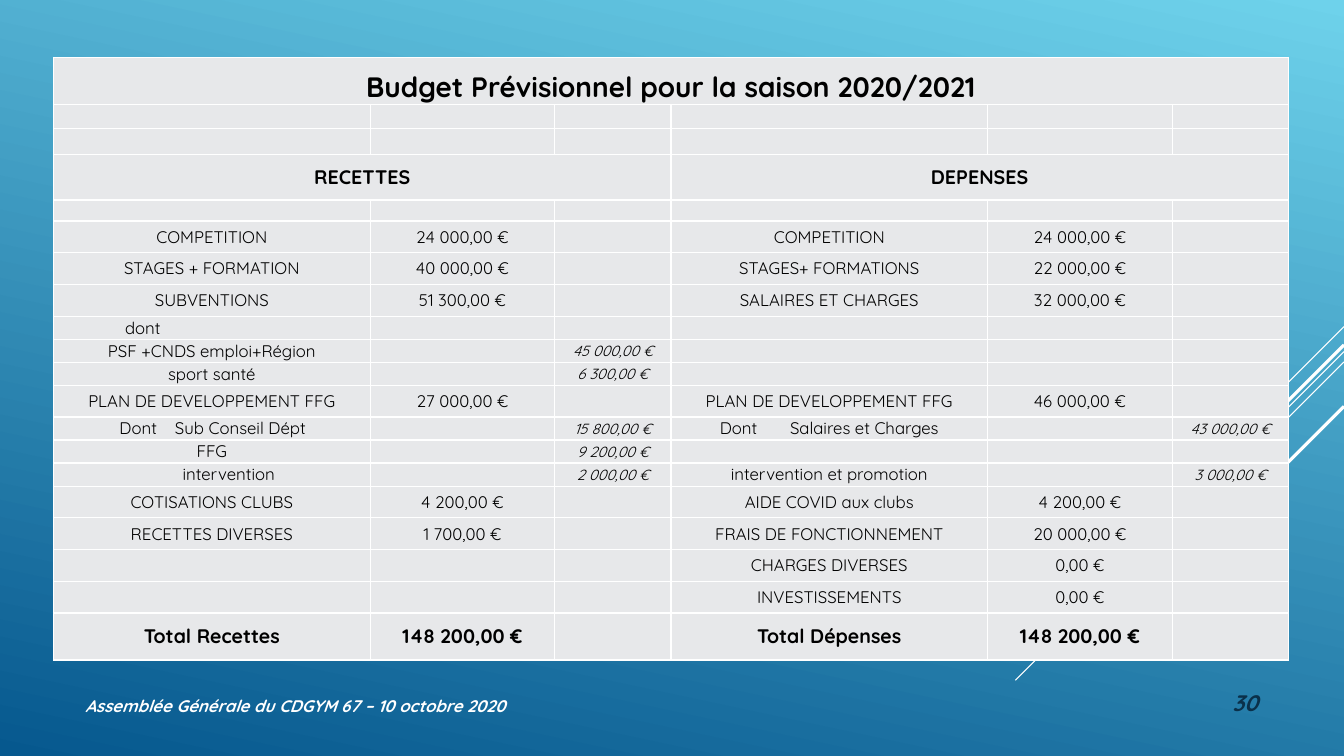
import pptx
import pptx.dml.color
import pptx.enum.shapes
import pptx.enum.text
import pptx.oxml
import pptx.oxml.ns
import pptx.util
from pptx.util import Cm

COLORS = {"sky": "6ED2EB", "deep": "06588E", "white": "FFFFFF",
          "cell": "E7E8EA", "ink": "000000", "number": "0A304A"}
FONT = "Quicksand"
ALIGN = pptx.enum.text.PP_ALIGN
ANCHOR = pptx.enum.text.MSO_ANCHOR
SLIDE_WIDTH, SLIDE_HEIGHT = 33.87, 19.05

COLUMN_WIDTHS = [7.98, 4.65, 2.93] * 2
TITLE = "Budget Prévisionnel pour la saison 2020/2021"
HEADINGS = ["RECETTES", "DEPENSES"]
HEADER_HEIGHTS = [1.19, 0.6, 0.66, 1.14, 0.53]
MAIN, DETAIL, TOTAL = 0.8, 0.58, 1.18
BUDGET = [
    (MAIN, "COMPETITION", "24 000,00 €", "", "COMPETITION", "24 000,00 €", ""),
    (MAIN, "STAGES + FORMATION", "40 000,00 €", "", "STAGES+ FORMATIONS", "22 000,00 €", ""),
    (MAIN, "SUBVENTIONS", "51 300,00 €", "", "SALAIRES ET CHARGES", "32 000,00 €", ""),
    (DETAIL, "dont", "", "", "", "", ""),
    (DETAIL, "PSF +CNDS emploi+Région", "", "45 000,00 €", "", "", ""),
    (DETAIL, "sport santé", "", "6 300,00 €", "", "", ""),
    (MAIN, "PLAN DE DEVELOPPEMENT FFG", "27 000,00 €", "",
     "PLAN DE DEVELOPPEMENT FFG", "46 000,00 €", ""),
    (DETAIL, "Dont\tSub Conseil Dépt", "", "15 800,00 €",
     "Dont\tSalaires et Charges", "", "43 000,00 €"),
    (DETAIL, "FFG", "", "9 200,00 €", "", "", ""),
    (DETAIL, "intervention", "", "2 000,00 €", "intervention et promotion", "", "3 000,00 €"),
    (MAIN, "COTISATIONS CLUBS", "4 200,00 €", "", "AIDE COVID aux clubs", "4 200,00 €", ""),
    (MAIN, "RECETTES DIVERSES", "1 700,00 €", "", "FRAIS DE FONCTIONNEMENT", "20 000,00 €", ""),
    (MAIN, "", "", "", "CHARGES DIVERSES", "0,00 €", ""),
    (MAIN, "", "", "", "INVESTISSEMENTS", "0,00 €", ""),
    (TOTAL, "Total Recettes", "148 200,00 €", "", "Total Dépenses", "148 200,00 €", ""),
]
LEFT_INDENTS = {"intervention": 3.25, "Dont\tSub Conseil Dépt": 1.66,
                "Dont\tSalaires et Charges": 1.23}
TAB_STOPS = {"Dont\tSub Conseil Dépt": 1.4, "Dont\tSalaires et Charges": 1.77}
RAYS = [(8.23, 2.54, 0.75), (8.86, 8.28, 0.75), (9.12, 5.26, 0.75),
        (8.69, 4.85, 2.25), (10.24, 3.53, 2.25)]


def rgb(name):
    return pptx.dml.color.RGBColor.from_string(COLORS[name])


def write(para, text, size, color, bold=False, italic=False):
    para.text = text
    for span in para.runs:
        font = span.font
        font.name, font.size = FONT, pptx.util.Pt(size)
        font.bold, font.italic = bold, italic
        font.color.rgb = rgb(color)


def paint_background(page):
    fill = page.background.fill
    fill.gradient()
    fill.gradient_angle = 258
    for stop, name in zip(fill.gradient_stops, ("sky", "deep")):
        stop.color.rgb = rgb(name)


def add_rays(page, right):
    for top, reach, weight in RAYS:
        ray = page.shapes.add_connector(
            pptx.enum.shapes.MSO_CONNECTOR.STRAIGHT,
            Cm(right), Cm(top), Cm(right - reach), Cm(top + reach))
        ray.line.color.rgb = rgb("white")
        ray.line.width = pptx.util.Pt(weight)
        ray._element.spPr.append(pptx.oxml.parse_xml(
            f'<a:effectLst {pptx.oxml.ns.nsdecls("a")}/>'))


def add_label(page, left, top, width, height, text, size, color, align, anchor):
    box = page.shapes.add_textbox(Cm(left), Cm(top), Cm(width), Cm(height))
    frame = box.text_frame
    frame.word_wrap = True
    frame.vertical_anchor = anchor
    para = frame.paragraphs[0]
    para.alignment = align
    write(para, text, size, color, bold=True, italic=True)


def style_cell(cell):
    cell.margin_left = cell.margin_right = cell.margin_top = cell.margin_bottom = 0
    cell.vertical_anchor = ANCHOR.MIDDLE
    namespace = pptx.oxml.ns.nsdecls("a")
    properties = cell._tc.get_or_add_tcPr()
    for side in ("lnL", "lnR", "lnT", "lnB"):
        properties.append(pptx.oxml.parse_xml(
            f'<a:{side} {namespace} w="12700"><a:solidFill>'
            f'<a:srgbClr val="{COLORS["white"]}"/></a:solidFill></a:{side}>'))
    cell.fill.solid()
    cell.fill.fore_color.rgb = rgb("cell")
    cell.text_frame.paragraphs[0]._p.append(pptx.oxml.parse_xml(
        f'<a:endParaRPr {namespace} sz="800"/>'))


def fill_cell(cell, text, size, bold=False, italic=False):
    para = cell.text_frame.paragraphs[0]
    para.alignment = ALIGN.CENTER
    if text in LEFT_INDENTS:
        para.alignment = ALIGN.LEFT
        cell.margin_left = Cm(LEFT_INDENTS[text])
    if text in TAB_STOPS:
        para._p.get_or_add_pPr().append(pptx.oxml.parse_xml(
            f'<a:tabLst {pptx.oxml.ns.nsdecls("a")}>'
            f'<a:tab pos="{Cm(TAB_STOPS[text])}" algn="l"/></a:tabLst>'))
    if text == "dont":
        cell.margin_right = Cm(3.48)
    write(para, text, size, "ink", bold, italic)


def add_budget(page, left, top):
    heights = HEADER_HEIGHTS + [entry[0] for entry in BUDGET]
    frame = page.shapes.add_table(
        len(heights), len(COLUMN_WIDTHS), Cm(left), Cm(top),
        Cm(sum(COLUMN_WIDTHS)), Cm(sum(heights)))
    table = frame.table
    for column, width in zip(table.columns, COLUMN_WIDTHS):
        column.width = Cm(width)
    for row, height in zip(table.rows, heights):
        row.height = Cm(height)
        for cell in row.cells:
            style_cell(cell)

    title = table.cell(0, 0)
    title.merge(table.cell(0, 5))
    title.vertical_anchor = ANCHOR.BOTTOM
    fill_cell(title, TITLE, 20, bold=True)
    for column, heading in zip((0, 3), HEADINGS):
        cell = table.cell(3, column)
        cell.merge(table.cell(3, column + 2))
        fill_cell(cell, heading, 14, bold=True)

    for row, (height, *texts) in enumerate(BUDGET, len(HEADER_HEIGHTS)):
        for column, text in enumerate(texts):
            if text:
                is_total = height == TOTAL
                is_detail = column % 3 == 2
                size = 14 if is_total else 10.5 if is_detail else 12
                fill_cell(table.cell(row, column), text, size, is_total, is_detail)


def build_budget_slide(deck):
    page = deck.slides.add_slide(deck.slide_layouts[6])
    paint_background(page)
    add_rays(page, SLIDE_WIDTH)
    add_label(page, 1.9, 17.42, 20.96, 0.74,
              "Assemblée Générale du CDGYM 67 – 10 octobre 2020",
              12, "white", ALIGN.LEFT, ANCHOR.MIDDLE)
    add_label(page, 30.12, 17.15, 1.83, 1.02, "30",
              16, "number", ALIGN.RIGHT, ANCHOR.BOTTOM)
    add_budget(page, 1.35, 1.45)


def main():
    deck = pptx.Presentation()
    deck.slide_width, deck.slide_height = Cm(SLIDE_WIDTH), Cm(SLIDE_HEIGHT)
    build_budget_slide(deck)
    deck.save("out.pptx")


if __name__ == "__main__":
    main()
